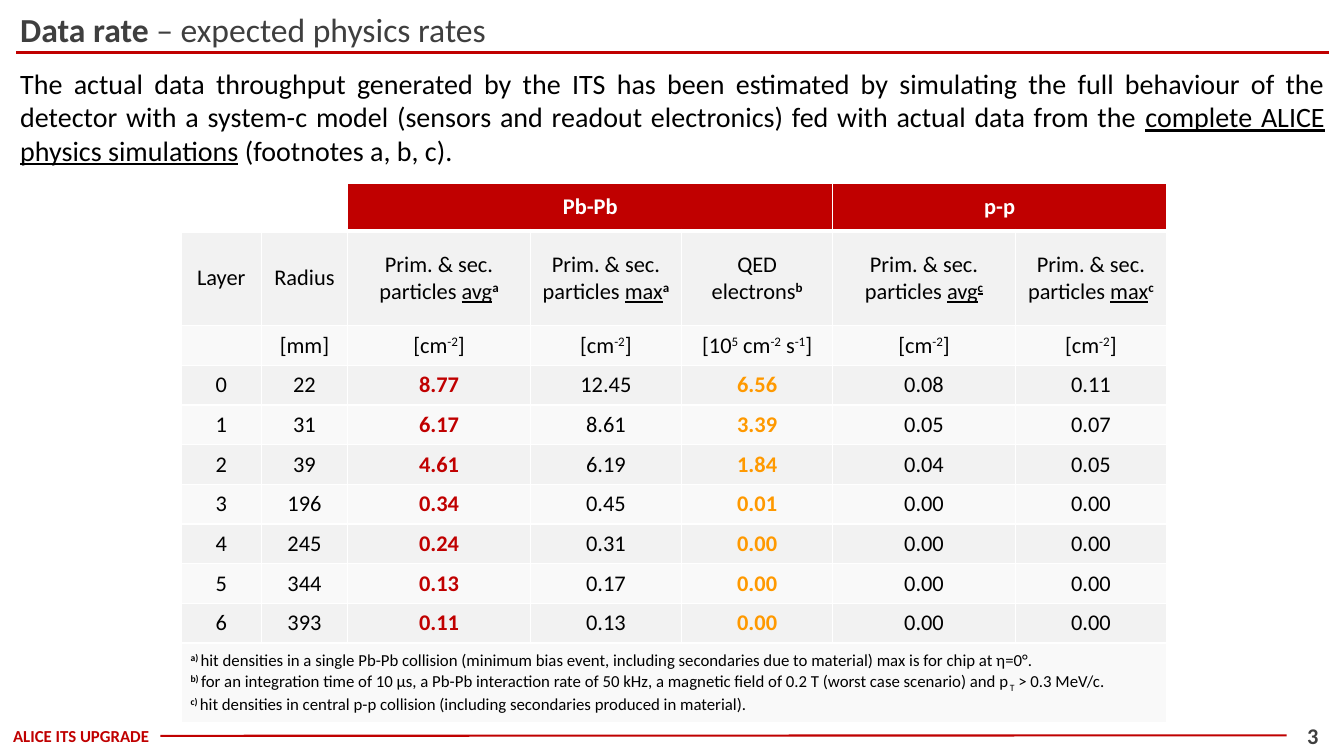
"""Build the slide on expected physics data rates."""
import dataclasses

import lxml.etree
import pptx
import pptx.dml.color
import pptx.enum.shapes
import pptx.enum.text
import pptx.oxml.ns
import pptx.util

Inches = pptx.util.Inches
Align = pptx.enum.text.PP_ALIGN
qn = pptx.oxml.ns.qn

RED, ORANGE, GREY = "C00000", "FF9900", "3F3F3F"
BLACK, WHITE = "000000", "FFFFFF"
BANDS = ("F2F2F2", "F9F9F9")
SUPERSCRIPT, SUBSCRIPT = 30, -25


@dataclasses.dataclass(frozen=True)
class Run:
    """A piece of text with its own emphasis."""

    text: str
    bold: bool = False
    underline: bool = False
    baseline: int = 0


def raised(text: str, bold: bool = False, underline: bool = False) -> Run:
    """Return a superscript run."""
    return Run(text, bold, underline, SUPERSCRIPT)


def particles(measure: str, note: str, note_underline: bool = False) -> list[Run]:
    """Return the heading of a particle density column."""
    note_run = raised(note, True, note_underline)
    return [Run("Prim. & sec. particles "), Run(measure, underline=True), note_run]


DENSITY = [Run("[cm"), raised("-2"), Run("]")]
FLUX = [Run("[10"), raised("5"), Run(" cm"), raised("-2"), Run(" s"), raised("-1"), Run("]")]
HEADINGS = [
    [Run("Layer")], [Run("Radius")], particles("avg", "a"), particles("max", "a"),
    [Run("QED electrons"), raised("b", True)],
    particles("avg", "c", True), particles("max", "c"),
]
UNITS = [[], [Run("[mm]")], DENSITY, DENSITY, FLUX, DENSITY, DENSITY]
RATES = [
    ("0", "22", "8.77", "12.45", "6.56", "0.08", "0.11"),
    ("1", "31", "6.17", "8.61", "3.39", "0.05", "0.07"),
    ("2", "39", "4.61", "6.19", "1.84", "0.04", "0.05"),
    ("3", "196", "0.34", "0.45", "0.01", "0.00", "0.00"),
    ("4", "245", "0.24", "0.31", "0.00", "0.00", "0.00"),
    ("5", "344", "0.13", "0.17", "0.00", "0.00", "0.00"),
    ("6", "393", "0.11", "0.13", "0.00", "0.00", "0.00"),
]
FOOTNOTES = [
    [raised("a) ", True),
     Run("hit densities in a single Pb-Pb collision (minimum bias event, including "
         "secondaries due to material) max is for chip at η=0°.")],
    [raised("b) ", True),
     Run("for an integration time of 10 µs, a Pb-Pb interaction rate of 50 kHz, a "
         "magnetic field of 0.2 T (worst case scenario) and p"),
     Run("T", baseline=SUBSCRIPT), Run(" > 0.3 MeV/c.")],
    [raised("c) ", True),
     Run("hit densities in central p-p collision (including secondaries produced in material).")],
]
HIGHLIGHTS = {2: RED, 4: ORANGE}
GROUPS = {(2, 4): "Pb-Pb", (5, 6): "p-p"}
COLUMN_WIDTHS = (0.79, 0.86, 1.81, 1.5, 1.5, 1.81, 1.5)
TABLE_HEIGHT, GROUP_HEIGHT, HEADING_HEIGHT = 5.35, 0.47, 0.94


def rgb(colour: str) -> pptx.dml.color.RGBColor:
    """Convert a hex string to a colour."""
    return pptx.dml.color.RGBColor.from_string(colour)


def write(frame, paragraphs: list[list[Run]], *, size: float, colour: str = BLACK,
          align=Align.LEFT) -> None:
    """Fill a text frame with formatted paragraphs."""
    for index, runs in enumerate(paragraphs):
        paragraph = frame.add_paragraph() if index else frame.paragraphs[0]
        paragraph.alignment = align
        paragraph.space_before = pptx.util.Pt(0)
        for item in runs:
            run = paragraph.add_run()
            run.text = item.text
            font = run.font
            font.name, font.size = "Calibri", pptx.util.Pt(size)
            font.bold, font.underline = item.bold, item.underline
            font.color.rgb = rgb(colour)
            if item.baseline:
                font._element.set("baseline", str(item.baseline * 1000))


def place(shape, left: float, top: float, width: float, height: float,
          inset: float = 0.04, wrap: bool = True):
    """Position a text shape, set its frame and return that frame."""
    shape.left, shape.top = Inches(left), Inches(top)
    shape.width, shape.height = Inches(width), Inches(height)
    frame = shape.text_frame
    frame.word_wrap = wrap
    frame.auto_size = pptx.enum.text.MSO_AUTO_SIZE.NONE
    frame.vertical_anchor = pptx.enum.text.MSO_ANCHOR.MIDDLE
    frame.margin_left = frame.margin_right = Inches(inset)
    frame.margin_top = frame.margin_bottom = Inches(inset)
    return frame


def add_rule(slide, left: float, right: float, y: float, width: float):
    """Draw a horizontal red line."""
    rule = slide.shapes.add_connector(
        pptx.enum.shapes.MSO_CONNECTOR.STRAIGHT,
        Inches(left), Inches(y), Inches(right), Inches(y))
    rule.line.color.rgb = rgb(RED)
    rule.line.width = pptx.util.Pt(width)
    lxml.etree.SubElement(rule._element.spPr, qn("a:effectLst"))
    return rule


def style_cell(cell, fill: str | None, bottom: float = 1) -> None:
    """Set the fill, margins and white borders of a cell."""
    cell.vertical_anchor = pptx.enum.text.MSO_ANCHOR.MIDDLE
    cell.margin_left = cell.margin_right = Inches(0.09)
    cell.margin_top = cell.margin_bottom = 0
    properties = cell._tc.get_or_add_tcPr()
    for side, width in (("L", 1), ("R", 1), ("T", 1), ("B", bottom)):
        border = lxml.etree.SubElement(
            properties, qn(f"a:ln{side}"), w=str(pptx.util.Pt(width)))
        solid = lxml.etree.SubElement(border, qn("a:solidFill"))
        lxml.etree.SubElement(solid, qn("a:srgbClr"), val=WHITE)
    if fill:
        cell.fill.solid()
        cell.fill.fore_color.rgb = rgb(fill)
    else:
        cell.fill.background()


def add_rates_table(slide) -> None:
    """Add the table of expected rates with its footnotes."""
    body = [HEADINGS, UNITS] + [
        [[Run(value, bold=column in HIGHLIGHTS)] for column, value in enumerate(rates)]
        for rates in RATES]
    last = len(body) + 1
    table = slide.shapes.add_table(
        last + 1, len(COLUMN_WIDTHS), Inches(1.8), Inches(1.82),
        Inches(sum(COLUMN_WIDTHS)), Inches(TABLE_HEIGHT)).table
    table.first_row = table.horz_banding = False
    for column, width in zip(table.columns, COLUMN_WIDTHS):
        column.width = Inches(width)
    unit = (TABLE_HEIGHT - GROUP_HEIGHT - HEADING_HEIGHT) / (len(body) + 1)
    heights = [GROUP_HEIGHT, HEADING_HEIGHT] + [unit] * (len(body) - 1) + [2 * unit]
    for row, height in zip(table.rows, heights):
        row.height = Inches(height)

    for column in range(len(COLUMN_WIDTHS)):
        style_cell(table.cell(0, column), RED if column > 1 else None, bottom=3)
        style_cell(table.cell(last, column), BANDS[1])
    for (first, final), name in GROUPS.items():
        group = table.cell(0, first)
        group.merge(table.cell(0, final))
        write(group.text_frame, [[Run(name, True)]], size=16, colour=WHITE, align=Align.CENTER)
    for row, contents in enumerate(body, start=1):
        for column, runs in enumerate(contents):
            cell = table.cell(row, column)
            style_cell(cell, BANDS[(row - 1) % 2])
            colour = HIGHLIGHTS.get(column, BLACK) if row > 2 else BLACK
            write(cell.text_frame, [runs], size=16, colour=colour, align=Align.CENTER)
    notes = table.cell(last, 0)
    notes.merge(table.cell(last, len(COLUMN_WIDTHS) - 1))
    write(notes.text_frame, FOOTNOTES, size=12)


def main() -> None:
    """Build and save the presentation."""
    presentation = pptx.Presentation()
    presentation.slide_width, presentation.slide_height = Inches(13.33), Inches(7.5)
    slide = presentation.slides.add_slide(presentation.slide_layouts[1])

    add_rule(slide, 0.16, 13.18, 0.52, 2.25)
    label = slide.shapes.add_textbox(0, 0, 0, 0)
    write(place(label, 0.02, 7.22, 1.57, 0.16, inset=0), [[Run("ALICE ITS UPGRADE", True)]],
          size=12, colour=RED, align=Align.CENTER)
    number = slide.shapes.add_textbox(0, 0, 0, 0)
    write(place(number, 12.76, 7.14, 0.52, 0.31, wrap=False), [[Run("3", True)]],
          size=16, colour=GREY, align=Align.CENTER)
    footer_rule = add_rule(slide, 12.76, 1.6, 7.3, 1.5)
    footer_rule.begin_connect(number, 1)
    footer_rule.end_connect(label, 3)

    write(place(slide.shapes.title, 0.16, 0.05, 13.02, 0.47),
          [[Run("Data rate ", True), Run("– expected physics rates")]], size=24, colour=GREY)
    add_rates_table(slide)
    summary = place(slide.placeholders[1], 0.16, 0.61, 13.02, 1.09)
    write(summary, [[
        Run("The actual data throughput generated by the ITS has been estimated by simulating "
            "the full behaviour of the detector with a system-c model (sensors and readout "
            "electronics) fed with actual data from the "),
        Run("complete ALICE physics simulations", underline=True),
        Run(" (footnotes a, b, c).")]], size=20, align=Align.JUSTIFY)
    properties = summary.paragraphs[0]._p.get_or_add_pPr()
    properties.set("marL", "0")
    properties.set("indent", "0")
    lxml.etree.SubElement(properties, qn("a:buNone"))
    presentation.save("out.pptx")


if __name__ == "__main__":
    main()
